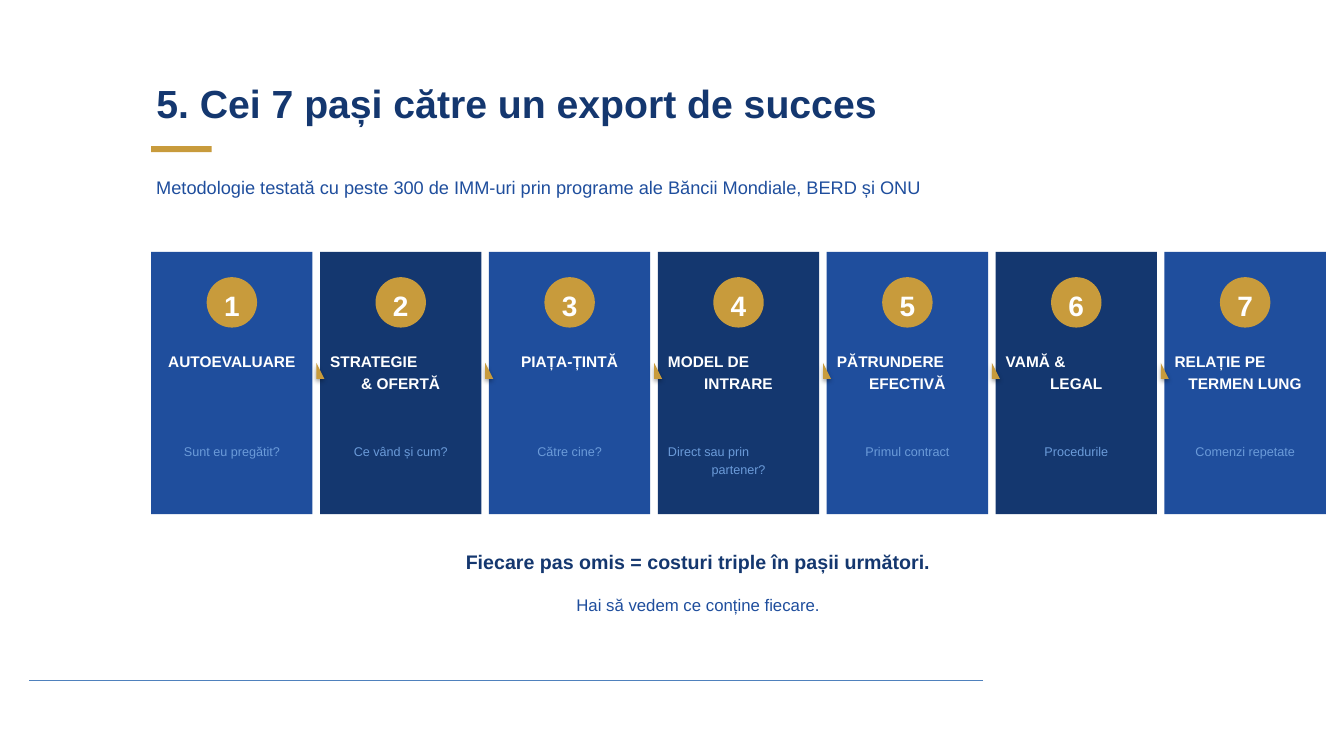
from dataclasses import dataclass

from lxml import etree
from pptx import Presentation
from pptx.dml.color import RGBColor
from pptx.enum import shapes, text
from pptx.oxml import ns
from pptx.util import Inches, Pt

LEFT, CENTER = text.PP_ALIGN.LEFT, text.PP_ALIGN.CENTER


@dataclass(frozen=True)
class Theme:
    font: str = "Arial"
    navy: str = "14376F"
    blue: str = "1F4E9D"
    pale: str = "6B9BD9"
    gold: str = "C89B3C"
    white: str = "FFFFFF"
    rule: str = "4F81BD"
    title: int = 28
    number: int = 20
    message: int = 14
    subtitle: int = 13
    closing: int = 12
    label: int = 11
    note: int = 9


def write(shape, lines, size, color, bold=False, aligns=(LEFT,), spacing=1.15,
          anchor=text.MSO_ANCHOR.TOP, inset=(0.05, 0.02),
          fit=text.MSO_AUTO_SIZE.SHAPE_TO_FIT_TEXT, font=Theme.font):
    """Fill a shape with lines; aligns gives one alignment per line."""
    frame = shape.text_frame
    frame.word_wrap = True
    frame.auto_size = fit
    frame.vertical_anchor = anchor
    frame.margin_left = frame.margin_right = Inches(inset[0])
    frame.margin_top = frame.margin_bottom = Inches(inset[1])
    for index, (line, align) in enumerate(zip(lines, aligns)):
        para = frame.paragraphs[0] if index == 0 else frame.add_paragraph()
        para.alignment = align
        para.line_spacing = spacing
        para.space_before = Pt(0)
        span = para.add_run()
        span.text = line
        span.font.name = font
        span.font.size = Pt(size)
        span.font.bold = bold
        span.font.color.rgb = RGBColor.from_string(color)


class Page:
    def __init__(self, deck, theme):
        self.theme = theme
        self.slide = deck.slides.add_slide(deck.slide_layouts[5])

    def title(self, line, *place):
        box = self.slide.shapes.title
        box.left, box.top, box.width, box.height = map(Inches, place)
        write(box, [line], self.theme.title, self.theme.navy, bold=True)

    def text(self, lines, *place, **style):
        box = self.slide.shapes.add_textbox(*map(Inches, place))
        write(box, lines, **style)

    def shape(self, kind, color, *place, shadow=False):
        shape = self.slide.shapes.add_shape(kind, *map(Inches, place))
        shape.fill.solid()
        shape.fill.fore_color.rgb = RGBColor.from_string(color)
        shape.line.fill.background()
        if not shadow:
            shape.shadow.inherit = False
        return shape

    def line(self, color, width, *ends):
        line = self.slide.shapes.add_connector(
            shapes.MSO_CONNECTOR.STRAIGHT, *map(Inches, ends))
        line.line.color.rgb = RGBColor.from_string(color)
        line.line.width = Pt(width)
        etree.SubElement(line._element.spPr, ns.qn("a:effectLst"))

    def step(self, number, label, note, left, top, width, height):
        theme = self.theme
        kinds = shapes.MSO_SHAPE
        fill = theme.blue if number % 2 else theme.navy
        self.shape(kinds.RECTANGLE, fill, left, top, width, height)
        badge = self.shape(kinds.OVAL, theme.gold,
                           left + (width - 0.5) / 2, top + 0.25, 0.5, 0.5)
        write(badge, [str(number)], theme.number, theme.white, bold=True,
              aligns=[CENTER], anchor=text.MSO_ANCHOR.MIDDLE, inset=(0, 0),
              fit=text.MSO_AUTO_SIZE.NONE)
        # Two-line captions start at the left and end centred
        inner = left + 0.05
        self.text(label, inner, top + 0.95, width - 0.1, 1.1,
                  size=theme.label, color=theme.white, bold=True,
                  aligns=[LEFT, CENTER][-len(label):])
        self.text(note, inner, top + 1.85, width - 0.1, 0.7,
                  size=theme.note, color=theme.pale, spacing=1.2,
                  aligns=[LEFT, CENTER][-len(note):])


STEPS = [
    (["AUTOEVALUARE"], ["Sunt eu pregătit?"]),
    (["STRATEGIE", "& OFERTĂ"], ["Ce vând și cum?"]),
    (["PIAȚA-ȚINTĂ"], ["Către cine?"]),
    (["MODEL DE", "INTRARE"], ["Direct sau prin", "partener?"]),
    (["PĂTRUNDERE", "EFECTIVĂ"], ["Primul contract"]),
    (["VAMĂ &", "LEGAL"], ["Procedurile"]),
    (["RELAȚIE PE", "TERMEN LUNG"], ["Comenzi repetate"]),
]
MARGIN, LAST_LEFT = 1.5, 11.55
CARD_TOP, CARD_WIDTH, CARD_HEIGHT = 2.5, 1.6, 2.6


def main():
    deck = Presentation()
    deck.slide_width, deck.slide_height = Inches(13.33), Inches(7.5)
    theme = Theme()
    page = Page(deck, theme)

    # Footer rule and heading
    page.line(theme.rule, 0.75, 9.75, 6.75, 0.29, 6.75)
    page.title("5. Cei 7 pași către un export de succes", MARGIN, 0.7, 11, 0.7)
    page.shape(shapes.MSO_SHAPE.RECTANGLE, theme.gold, MARGIN, 1.45, 0.6, 0.06)
    page.text(["Metodologie testată cu peste 300 de IMM-uri prin programe "
               "ale Băncii Mondiale, BERD și ONU"], MARGIN, 1.7, 11, 0.27,
              size=theme.subtitle, color=theme.blue)

    # Step cards
    pitch = (LAST_LEFT - MARGIN) / (len(STEPS) - 1)
    lefts = [MARGIN + index * pitch for index in range(len(STEPS))]
    for number, (left, (label, note)) in enumerate(zip(lefts, STEPS), 1):
        page.step(number, label, note, left, CARD_TOP, CARD_WIDTH, CARD_HEIGHT)

    # Markers starting in the middle of each gap
    for left in lefts[:-1]:
        page.shape(shapes.MSO_SHAPE.RIGHT_TRIANGLE, theme.gold,
                   left + (CARD_WIDTH + pitch) / 2, 3.6, 0.08, 0.16, shadow=True)

    # Closing message
    page.text(["Fiecare pas omis = costuri triple în pașii următori."],
              MARGIN, 5.4, 10.85, 0.4, size=theme.message, color=theme.navy,
              bold=True, aligns=[CENTER])
    page.text(["Hai să vedem ce conține fiecare."],
              MARGIN, 5.85, 10.85, 0.4, size=theme.closing, color=theme.blue,
              aligns=[CENTER])

    deck.save("out.pptx")


if __name__ == "__main__":
    main()
